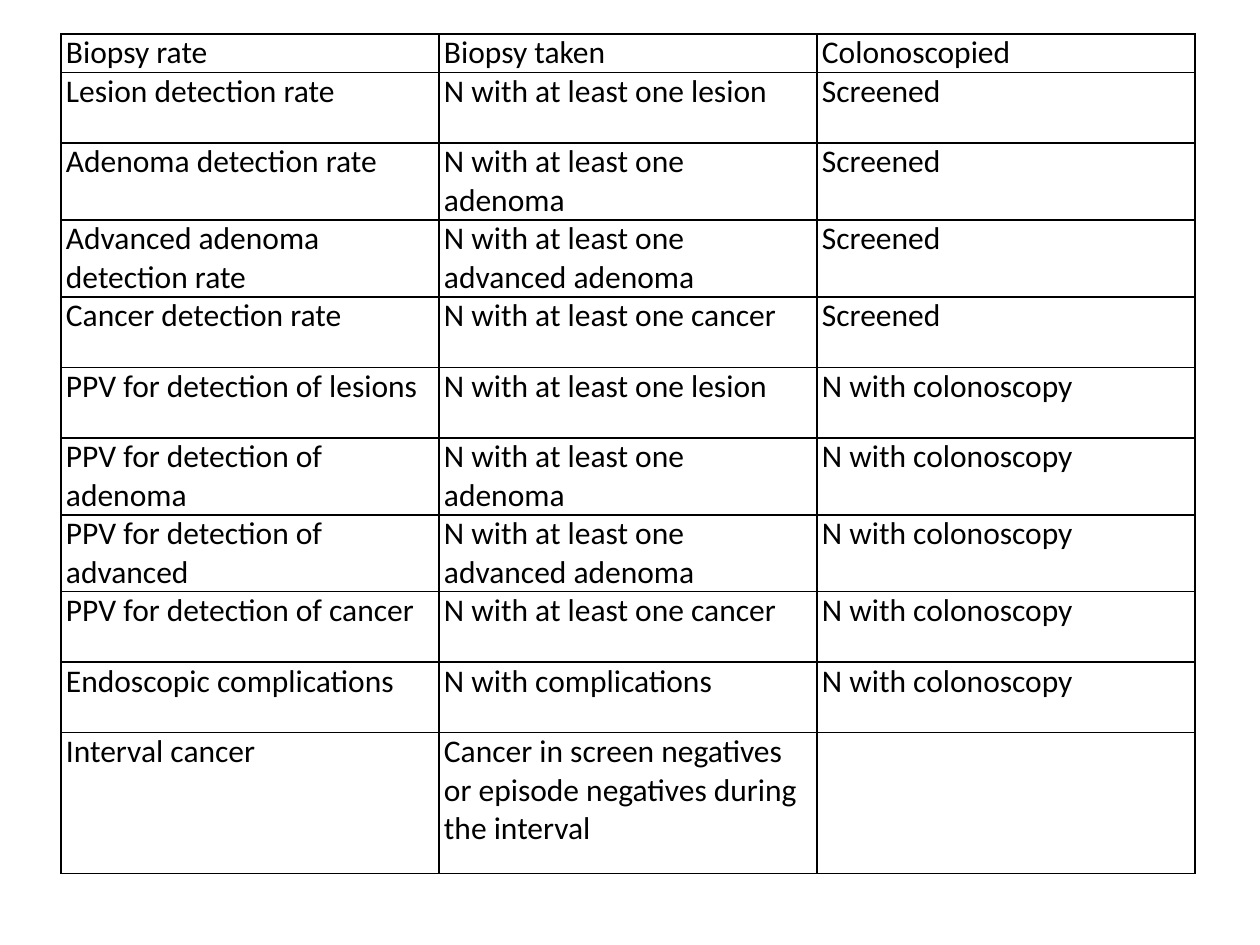
import pptx
import pptx.dml.color
import pptx.oxml
import pptx.oxml.ns
import pptx.util

EMU_PER_PX = 914400 / 126
BLACK = "000000"
FONT = "Calibri"
COLONOSCOPY = "N with colonoscopy"
INDICATORS = [
    ("Biopsy rate", "Biopsy taken", "Colonoscopied"),
    ("Lesion detection rate", "N with at least one lesion", "Screened"),
    ("Adenoma detection rate", "N with at least one adenoma", "Screened"),
    ("Advanced adenoma detection rate", "N with at least one advanced adenoma", "Screened"),
    ("Cancer detection rate", "N with at least one cancer", "Screened"),
    ("PPV for detection of lesions", "N with at least one lesion", COLONOSCOPY),
    ("PPV for detection of adenoma", "N with at least one adenoma", COLONOSCOPY),
    ("PPV for detection of advanced", "N with at least one advanced adenoma", COLONOSCOPY),
    ("PPV for detection of cancer", "N with at least one cancer", COLONOSCOPY),
    ("Endoscopic complications", "N with complications", COLONOSCOPY),
    ("Interval cancer",
     "Cancer in screen negatives or episode negatives during the interval", ""),
]
ROW_UNITS = [1] + [2] * 9 + [4]


def px(length):
    """Turn a length in px into EMU."""
    return pptx.util.Emu(round(length * EMU_PER_PX))


def color(hex_value):
    """Turn a hex string into a colour."""
    return pptx.dml.color.RGBColor.from_string(hex_value)


def draw_borders(cell, hex_value, points):
    """Rule all four sides of a cell."""
    properties = cell._tc.get_or_add_tcPr()
    for position, side in enumerate(("lnL", "lnR", "lnT", "lnB")):
        border = pptx.oxml.parse_xml(
            f'<a:{side} {pptx.oxml.ns.nsdecls("a")} w="{pptx.util.Pt(points)}">'
            f'<a:solidFill><a:srgbClr val="{hex_value}"/></a:solidFill></a:{side}>')
        properties.insert(position, border)


def fill_cell(cell, wording):
    """Write and format one cell."""
    cell.margin_left = cell.margin_right = px(5)
    cell.margin_top = cell.margin_bottom = 0
    cell.fill.background()
    draw_borders(cell, BLACK, 1)
    if wording:
        run = cell.text_frame.paragraphs[0].add_run()
        run.text = wording
        run.font.name = FONT
        run.font.size = pptx.util.Pt(18)
        run.font.color.rgb = color(BLACK)


def add_indicator_table(slide, left, top, width, height):
    """Place the table of screening indicators in the given box."""
    column_count = len(INDICATORS[0])
    table = slide.shapes.add_table(
        len(INDICATORS), column_count, px(left), px(top), px(width), px(height)).table
    table.first_row = False
    table.horz_banding = False
    for column in table.columns:
        column.width = px(width / column_count)
    row_unit = height / sum(ROW_UNITS)
    for row, units, indicator in zip(table.rows, ROW_UNITS, INDICATORS):
        row.height = px(units * row_unit)
        for cell, wording in zip(row.cells, indicator):
            fill_cell(cell, wording)


def main():
    """Build and save the slide."""
    presentation = pptx.Presentation()
    presentation.slide_width = px(1260)
    presentation.slide_height = px(945)
    slide = presentation.slides.add_slide(presentation.slide_layouts[6])
    add_indicator_table(slide, 61, 34, 1134, 811)
    presentation.save("out.pptx")


if __name__ == "__main__":
    main()
